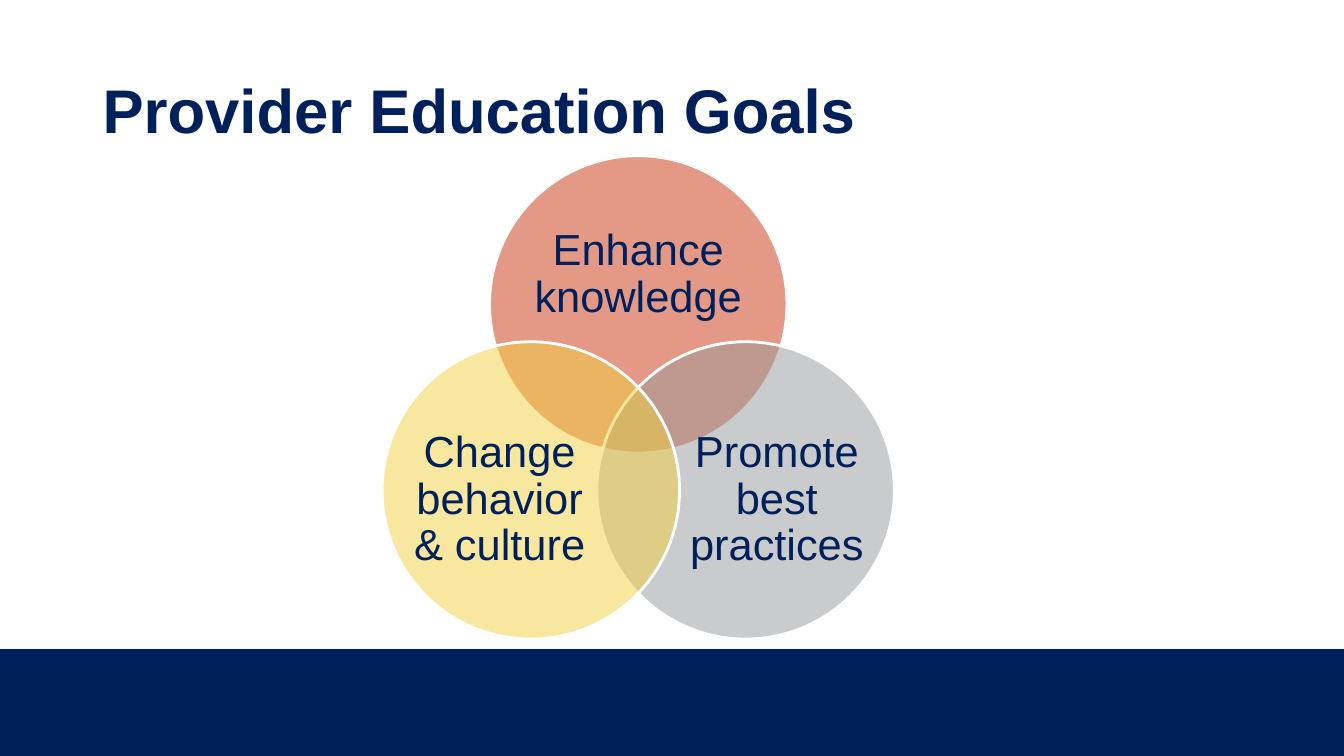
from math import cos, radians, sin

from lxml import etree
from pptx import Presentation
from pptx.dml.color import RGBColor
from pptx.enum.shapes import MSO_SHAPE
from pptx.enum.text import MSO_ANCHOR, PP_ALIGN
from pptx.oxml.ns import qn
from pptx.util import Inches, Pt

RECTANGLE, OVAL = MSO_SHAPE.RECTANGLE, MSO_SHAPE.OVAL
MIDDLE = MSO_ANCHOR.MIDDLE
LEFT, CENTER = PP_ALIGN.LEFT, PP_ALIGN.CENTER

COLORS = {"navy": "00205B", "pale": "F8F8F8", "white": "FFFFFF",
          "red": "CB350F", "gray": "97999B", "yellow": "F3D03E"}
PAGE_WIDTH, PAGE_HEIGHT = 13.33, 7.5
TITLE = "Provider Education Goals"
FOOTER_BANDS = [("pale", 6.43), ("navy", 6.44)]  # colour, top

# Label, colour, angle clockwise from the top, label box (left, top, width, height)
GOALS = [
    ("Enhance knowledge", "red", 0, (5.25, 2.06, 2.16, 1.33)),
    ("Promote best practices", "gray", 120, (6.82, 4.15, 1.77, 1.62)),
    ("Change behavior & culture", "yellow", 240, (4.07, 4.15, 1.77, 1.62)),
]
VENN_X, VENN_Y = 6.33, 4.25
VENN_RADIUS = 1.23
DIAMETER = 2.95


def rgb(name):
    return RGBColor.from_string(COLORS[name])


def add_filled(page, kind, bounds, color):
    shape = page.shapes.add_shape(kind, *map(Inches, bounds))
    shape.shadow.inherit = False
    shape.fill.solid()
    shape.fill.fore_color.rgb = rgb(color)
    shape.line.fill.background()
    return shape


def add_circle(page, bounds, color):
    """Add a half-transparent circle with a white outline."""
    circle = add_filled(page, OVAL, bounds, color)
    fill_color = circle.fill._xPr.find(qn("a:solidFill"))[0]
    etree.SubElement(fill_color, qn("a:alpha"), val="50000")
    circle.line.color.rgb = rgb("white")
    circle.line.width = Pt(2)


def add_text(page, text, bounds, size, align, margins=(0, 0), bold=False):
    box = page.shapes.add_textbox(*map(Inches, bounds))
    frame = box.text_frame
    frame.word_wrap = True
    frame.vertical_anchor = MIDDLE
    frame.margin_left = frame.margin_right = Inches(margins[0])
    frame.margin_top = frame.margin_bottom = Inches(margins[1])
    para = frame.paragraphs[0]
    para.text = text
    para.alignment = align
    para.line_spacing = 0.9
    para.font.name = "Arial"
    para.font.size = Pt(size)
    para.font.bold = bold
    para.font.color.rgb = rgb("navy")


def main():
    deck = Presentation()
    deck.slide_width, deck.slide_height = Inches(PAGE_WIDTH), Inches(PAGE_HEIGHT)
    page = deck.slides.add_slide(deck.slide_layouts[6])

    for color, top in FOOTER_BANDS:
        add_filled(page, RECTANGLE, (0, top, PAGE_WIDTH, PAGE_HEIGHT - top), color)
    add_text(page, TITLE, (0.92, 0.4, 11.5, 1.45), 44, LEFT, (0.1, 0.05), bold=True)

    for label, color, angle, label_bounds in GOALS:
        left = VENN_X + VENN_RADIUS * sin(radians(angle)) - DIAMETER / 2
        top = VENN_Y - VENN_RADIUS * cos(radians(angle)) - DIAMETER / 2
        add_circle(page, (left, top, DIAMETER, DIAMETER), color)
        add_text(page, label, label_bounds, 31, CENTER)

    deck.save("out.pptx")


if __name__ == "__main__":
    main()
